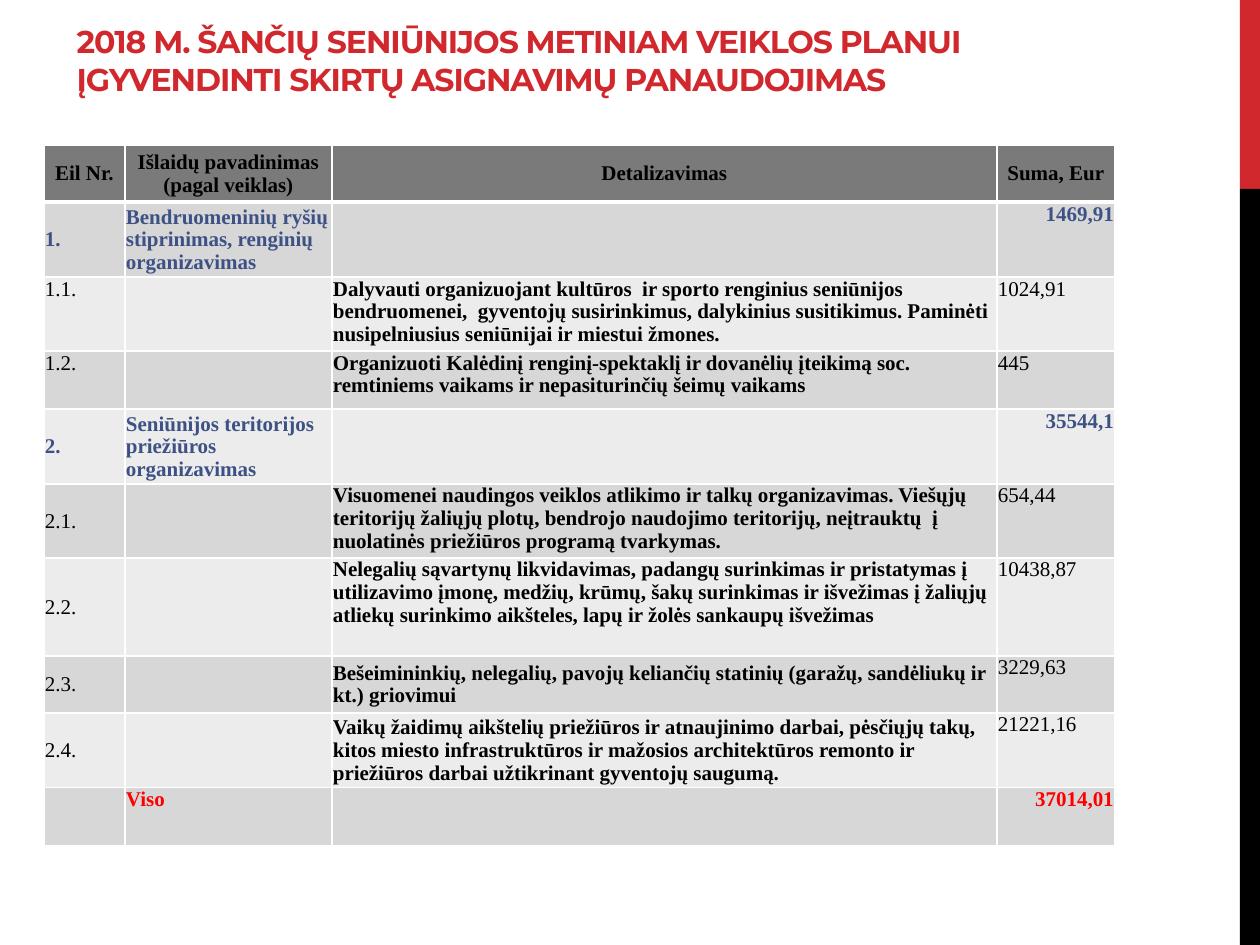
from lxml.etree import SubElement as Sub
from pptx import Presentation
from pptx.dml.color import RGBColor as RGB
from pptx.enum.shapes import MSO_SHAPE as Shape
from pptx.enum.text import MSO_ANCHOR as Anchor, MSO_AUTO_SIZE as Fit, PP_ALIGN as Align
from pptx.oxml.ns import qn
from pptx.util import Pt

PX = 914400 // 126
HEX = {"red": "D1282E", "black": "000000", "white": "FFFFFF", "head": "7A7A7A",
       "dark": "D7D7D7", "light": "ECECEC", "blue": "3D5185", "total": "FF0000"}
COLS = [81, 207, 665, 118]
HEIGHTS = [57, 75, 74, 58, 75, 74, 98, 57, 75, 58]
TOP, MID = Anchor.TOP, Anchor.MIDDLE

# Each row: kind, anchor of number, anchor of detail, four texts
ROWS = [
    ("head", MID, MID, "Eil Nr.", "Išlaidų pavadinimas (pagal veiklas)", "Detalizavimas", "Suma, Eur"),
    ("group", MID, TOP, "1.", "Bendruomeninių ryšių stiprinimas, renginių organizavimas", "", "1469,91"),
    ("item", TOP, TOP, "1.1.", "", "Dalyvauti organizuojant kultūros  ir sporto renginius seniūnijos "
     "bendruomenei,  gyventojų susirinkimus, dalykinius susitikimus. Paminėti "
     "nusipelniusius seniūnijai ir miestui žmones.", "1024,91"),
    ("item", TOP, TOP, "1.2.", "", "Organizuoti Kalėdinį renginį-spektaklį ir dovanėlių įteikimą soc. "
     "remtiniems vaikams ir nepasiturinčių šeimų vaikams", "445"),
    ("group", MID, TOP, "2.", "Seniūnijos teritorijos priežiūros organizavimas", "", "35544,1"),
    ("item", MID, TOP, "2.1.", "", "Visuomenei naudingos veiklos atlikimo ir talkų organizavimas. Viešųjų "
     "teritorijų žaliųjų plotų, bendrojo naudojimo teritorijų, neįtrauktų  į "
     "nuolatinės priežiūros programą tvarkymas.", "654,44"),
    ("item", MID, TOP, "2.2.", "", "Nelegalių sąvartynų likvidavimas, padangų surinkimas ir pristatymas į "
     "utilizavimo įmonę, medžių, krūmų, šakų surinkimas ir išvežimas į žaliųjų "
     "atliekų surinkimo aikšteles, lapų ir žolės sankaupų išvežimas", "10438,87"),
    ("item", MID, MID, "2.3.", "", "Bešeimininkių, nelegalių, pavojų keliančių statinių (garažų, sandėliukų ir "
     "kt.) griovimui", "3229,63"),
    ("item", MID, MID, "2.4.", "", "Vaikų žaidimų aikštelių priežiūros ir atnaujinimo darbai, pėsčiųjų takų,  "
     "kitos miesto infrastruktūros ir mažosios architektūros remonto ir "
     "priežiūros darbai užtikrinant gyventojų saugumą.", "21221,16"),
    ("total", TOP, TOP, "", "Viso", "", "37014,01"),
]
INK = {"head": "black", "group": "blue", "item": "black", "total": "total"}


def write(frame, text, font="Times New Roman", size=12, ink="black", bold=True,
          align=Align.LEFT, lead=0.97, track=None):
    para = frame.paragraphs[0]
    para.alignment, para.line_spacing = align, lead
    run = para.add_run()
    run.text = text
    face = run.font
    face.name, face.size, face.bold = font, Pt(size), bold
    face.color.rgb = RGB.from_string(HEX[ink])
    if track is not None:
        run._r.get_or_add_rPr().set("spc", str(track))


def paint(shape, name):
    shape.fill.solid()
    shape.fill.fore_color.rgb = RGB.from_string(HEX[name])


def edge(cell, foot):
    # Borders must come before the fill in the cell properties
    for side, width in (("L", 1), ("R", 1), ("T", 1), ("B", foot)):
        line = Sub(cell._tc.get_or_add_tcPr(), qn(f"a:ln{side}"), w=str(Pt(width)))
        Sub(Sub(line, qn("a:solidFill")), qn("a:srgbClr"), val=HEX["white"])


def bar(slide, x, y, w, h):
    # Side bar: one fifth red, the rest black
    cut = h // 5
    for name, top, tall in (("red", y, cut), ("black", y + cut, h - cut)):
        part = slide.shapes.add_shape(Shape.RECTANGLE, x * PX, top * PX, w * PX, tall * PX)
        part.shadow.inherit = False
        part.line.fill.background()
        paint(part, name)


def head(slide, x, y, w, h):
    title = slide.shapes.title
    title.left, title.top, title.width, title.height = (n * PX for n in (x, y, w, h))
    frame = title.text_frame
    frame.word_wrap, frame.auto_size, frame.vertical_anchor = True, Fit.NONE, TOP
    write(frame, "2018 M. ŠANČIŲ SENIŪNIJOS METINIAM VEIKLOS PLANUI ĮGYVENDINTI "
          "SKIRTŲ ASIGNAVIMŲ PANAUDOJIMAS", font="Montserrat", size=18,
          ink="red", lead=1.0, track=-60)


def budget(slide, x, y):
    grid = slide.shapes.add_table(len(ROWS), len(COLS), x * PX, y * PX,
                                  sum(COLS) * PX, sum(HEIGHTS) * PX).table
    for col, wide in zip(grid.columns, COLS):
        col.width = wide * PX
    for r, (kind, first, detail, *texts) in enumerate(ROWS):
        grid.rows[r].height = HEIGHTS[r] * PX
        for c, text in enumerate(texts):
            cell = grid.cell(r, c)
            cell.margin_left = cell.margin_right = cell.margin_top = PX
            cell.margin_bottom = 0
            last = c == 3
            cell.vertical_anchor = (first, first, detail, MID if r == 0 else TOP)[c]
            edge(cell, 3 if r == 0 else 1)
            paint(cell, "head" if r == 0 else "dark" if r % 2 else "light")
            if text:
                align = (Align.CENTER if r == 0 else
                         Align.RIGHT if last and kind != "item" else Align.LEFT)
                write(cell.text_frame, text, ink=INK[kind], align=align,
                      bold=kind != "item" or c == 2)


def main():
    deck = Presentation()
    deck.slide_width, deck.slide_height = 1260 * PX, 945 * PX
    slide = deck.slides.add_slide(deck.slide_layouts[5])
    bar(slide, 1240, 0, 20, 945)
    head(slide, 64, 16, 974, 64)
    budget(slide, 44, 145)
    deck.save("out.pptx")


if __name__ == "__main__":
    main()
